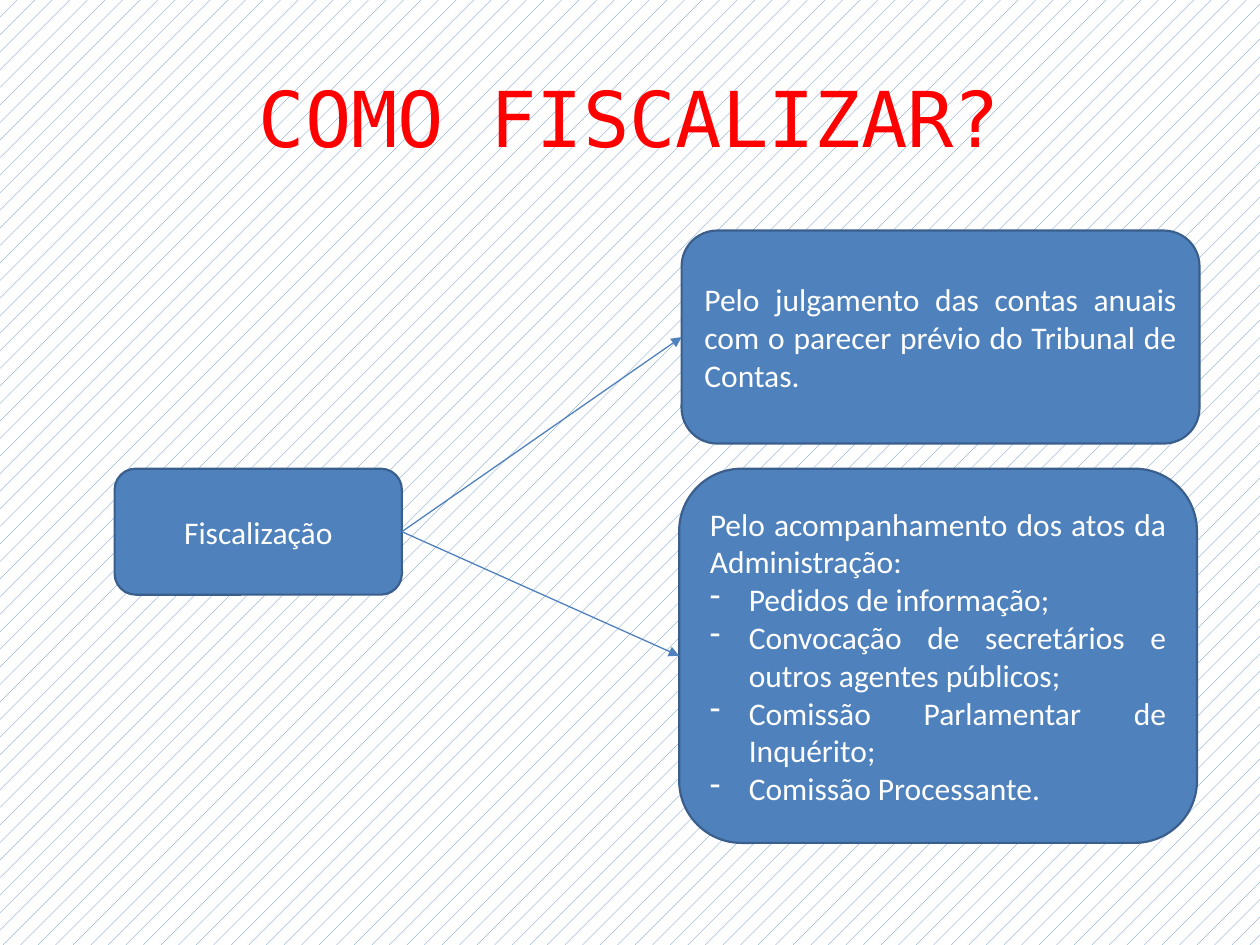
from lxml.etree import SubElement
from pptx import Presentation
from pptx.dml.color import RGBColor
from pptx.enum.dml import MSO_PATTERN
from pptx.enum.shapes import MSO_CONNECTOR, MSO_SHAPE
from pptx.enum.text import MSO_ANCHOR, PP_ALIGN
from pptx.oxml.ns import qn
from pptx.util import Inches, Pt

BLUE, DARK_BLUE, WHITE, RED = "4F81BD", "3A5F8C", "FFFFFF", "FF0000"
BULLET_INDENT = Inches(0.31)


def color(hex_string):
    return RGBColor.from_string(hex_string)


def write_paragraphs(shape, lines, alignment, font_format, font_color):
    """Fill a shape with lines; those starting with "- " become bullets."""
    frame = shape.text_frame
    frame.word_wrap = True
    frame.vertical_anchor = MSO_ANCHOR.MIDDLE
    for index, line in enumerate(lines):
        paragraph = frame.add_paragraph() if index else frame.paragraphs[0]
        paragraph.alignment = alignment
        run = paragraph.add_run()
        run.text = line.removeprefix("- ")
        for name, value in font_format.items():
            setattr(run.font, name, value)
        run.font.color.rgb = color(font_color)
        if line.startswith("- "):
            properties = paragraph._p.get_or_add_pPr()
            properties.set("marL", str(BULLET_INDENT))
            properties.set("indent", str(-BULLET_INDENT))
            SubElement(properties, qn("a:buFontTx"))
            SubElement(properties, qn("a:buChar"), char="-")


presentation = Presentation()
presentation.slide_width = Inches(10)
presentation.slide_height = Inches(7.5)
slide = presentation.slides.add_slide(presentation.slide_layouts[6])

background = slide.background.fill
background.patterned()
background.pattern = MSO_PATTERN.PERCENT_5
background.fore_color.rgb = color(BLUE)
background.back_color.rgb = color(WHITE)

title = slide.shapes.add_textbox(Inches(0.5), Inches(0.3), Inches(9), Inches(1.25))
title_format = {"name": "DejaVu Sans Mono", "size": Pt(44)}
write_paragraphs(title, ["COMO FISCALIZAR?"], PP_ALIGN.CENTER, title_format, RED)

box_format = {"name": "Calibri", "size": Pt(18)}
box_contents = [
    ((0.91, 3.72, 2.28, 1), PP_ALIGN.CENTER, ["Fiscalização"]),
    ((5.41, 1.83, 4.11, 1.69), PP_ALIGN.JUSTIFY, [
        "Pelo julgamento das contas anuais com o parecer prévio do Tribunal de Contas.",
    ]),
    ((5.39, 3.72, 4.11, 2.97), PP_ALIGN.JUSTIFY, [
        "Pelo acompanhamento dos atos da Administração:",
        "- Pedidos de informação;",
        "- Convocação de secretários e outros agentes públicos;",
        "- Comissão Parlamentar de Inquérito;",
        "- Comissão Processante.",
    ]),
]
boxes = []
for position, alignment, lines in box_contents:
    box = slide.shapes.add_shape(
        MSO_SHAPE.ROUNDED_RECTANGLE, *[Inches(value) for value in position])
    box.shadow.inherit = False
    box.fill.solid()
    box.fill.fore_color.rgb = color(BLUE)
    box.line.color.rgb = color(DARK_BLUE)
    box.line.width = Pt(1.25)
    write_paragraphs(box, lines, alignment, box_format, WHITE)
    boxes.append(box)

source, *targets = boxes
for target in targets:
    arrow = slide.shapes.add_connector(MSO_CONNECTOR.STRAIGHT, 0, 0, 0, 0)
    arrow.begin_connect(source, 3)
    arrow.end_connect(target, 1)
    arrow.line.color.rgb = color(BLUE)
    arrow.line.width = Pt(0.75)
    SubElement(arrow.line._get_or_add_ln(), qn("a:tailEnd"), type="triangle")
    SubElement(arrow._element.spPr, qn("a:effectLst"))

presentation.save("out.pptx")
